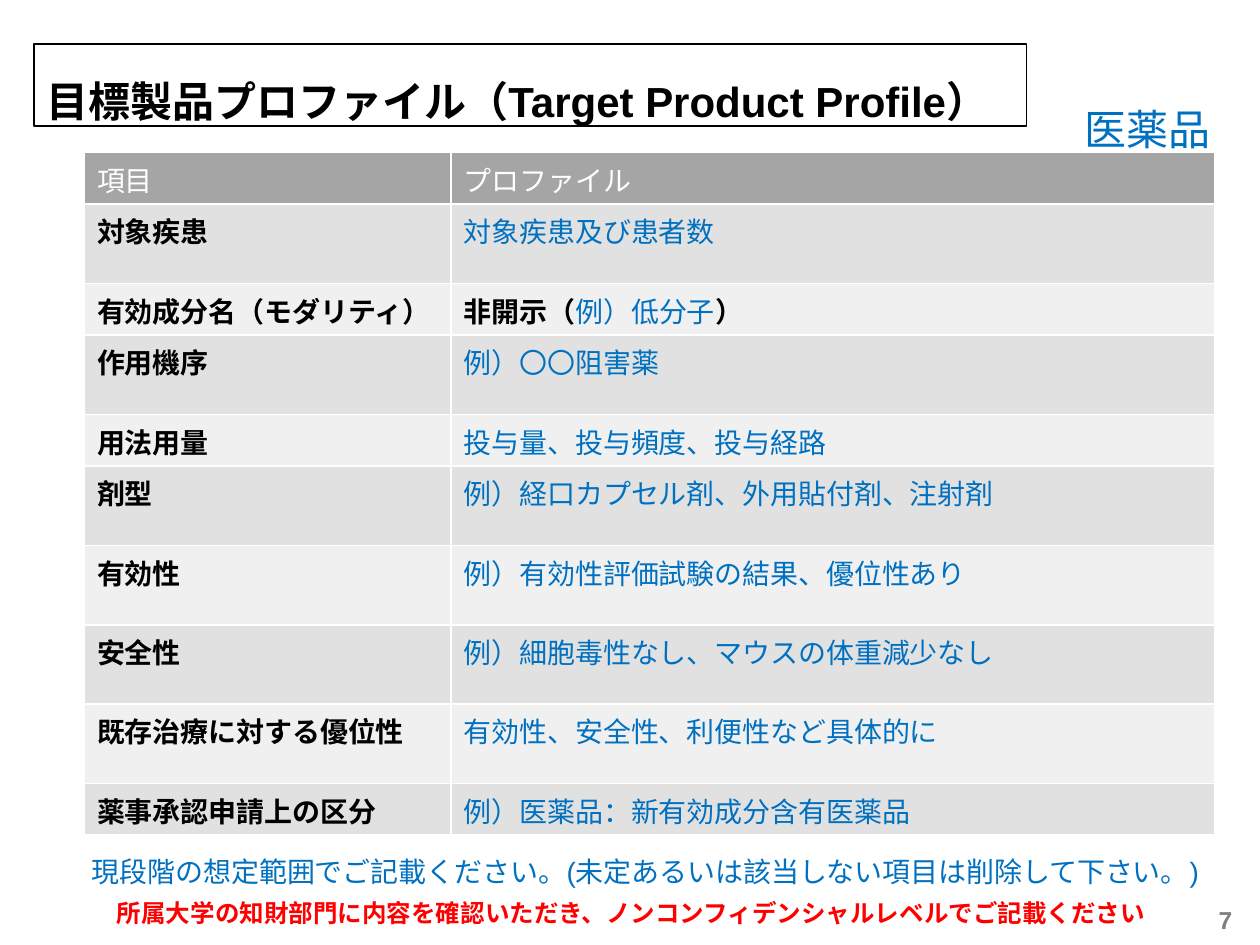
from lxml import etree
from pptx import Presentation
from pptx.dml.color import RGBColor
from pptx.enum.shapes import MSO_SHAPE
from pptx.enum.text import MSO_ANCHOR, MSO_AUTO_SIZE, PP_ALIGN
from pptx.oxml.ns import qn
from pptx.util import Inches, Pt

RECT = MSO_SHAPE.RECTANGLE
TOP, MIDDLE = MSO_ANCHOR.TOP, MSO_ANCHOR.MIDDLE
GROW, FIXED = MSO_AUTO_SIZE.SHAPE_TO_FIT_TEXT, MSO_AUTO_SIZE.NONE
LEFT, CENTER = PP_ALIGN.LEFT, PP_ALIGN.CENTER

BLACK, WHITE, BLUE, RED, GRAY = "000000", "FFFFFF", "0070C0", "FF0000", "808080"
HEAD, BANDS = "A5A5A5", ("E1E1E1", "F0F0F0")
SHORT, TALL = 0.41, 0.63

# item, profile (black bold parts are marked True), row height
ROWS = [
    ("対象疾患", "対象疾患及び患者数", TALL),
    ("有効成分名（モダリティ）",
     [("非開示（", True), ("例）低分子", False), ("）", True)], SHORT),
    ("作用機序", "例）〇〇阻害薬", TALL),
    ("用法用量", "投与量、投与頻度、投与経路", SHORT),
    ("剤型", "例）経口カプセル剤、外用貼付剤、注射剤", TALL),
    ("有効性", "例）有効性評価試験の結果、優位性あり", TALL),
    ("安全性", "例）細胞毒性なし、マウスの体重減少なし", TALL),
    ("既存治療に対する優位性", "有効性、安全性、利便性など具体的に", TALL),
    ("薬事承認申請上の区分", "例）医薬品：新有効成分含有医薬品", SHORT),
]


def color(text):
    return RGBColor.from_string(text)


def write(par, text, size=16, font="Arial", ink=BLACK, bold=False):
    """Add one formatted run to a paragraph."""
    run = par.add_run()
    run.text = text
    run.font.size = Pt(size)
    run.font.name = font
    run.font.bold = bold
    run.font.color.rgb = color(ink)


def edge(cell, ink=WHITE, width=1):
    """Draw the four borders of a cell, ahead of its fill."""
    props = cell._tc.get_or_add_tcPr()
    for spot, side in enumerate(("a:lnL", "a:lnR", "a:lnT", "a:lnB")):
        line = etree.Element(qn(side), w=str(Pt(width)))
        fill = etree.SubElement(line, qn("a:solidFill"))
        etree.SubElement(fill, qn("a:srgbClr"), val=ink)
        props.insert(spot, line)


class Deck:
    def __init__(self, font="Arial", grid="Calibri"):
        self.font, self.grid = font, grid
        self.prs = Presentation()
        self.prs.slide_width, self.prs.slide_height = Inches(10), Inches(7.5)
        self.slide = self.prs.slides.add_slide(self.prs.slide_layouts[6])

    def fill(self, shape, text, wrap=True, fit=GROW, space=None,
             align=LEFT, anchor=TOP, **style):
        frame = shape.text_frame
        frame.word_wrap = wrap
        frame.auto_size = fit
        frame.vertical_anchor = anchor
        par = frame.paragraphs[0]
        par.alignment = align
        par.line_spacing = space
        write(par, text, font=self.font, **style)

    def label(self, box, text, **style):
        shape = self.slide.shapes.add_textbox(*map(Inches, box))
        self.fill(shape, text, **style)

    def frame(self, box, text, **style):
        """Add a black outlined rectangle with text."""
        shape = self.slide.shapes.add_shape(RECT, *map(Inches, box))
        shape.shadow.inherit = False
        shape.fill.background()
        shape.line.color.rgb = color(BLACK)
        shape.line.width = Pt(0.75)
        self.fill(shape, text, **style)

    def cell(self, cell, parts, back):
        """Fill a cell from (text, ink, bold) parts."""
        cell.fill.solid()
        cell.fill.fore_color.rgb = color(back)
        edge(cell)
        par = cell.text_frame.paragraphs[0]
        for text, ink, bold in parts:
            write(par, text, font=self.grid, ink=ink, bold=bold)

    def table(self, box, heads, rows, widths):
        shape = self.slide.shapes.add_table(
            len(rows) + 1, len(heads), *map(Inches, box))
        table = shape.table
        for col, width in zip(table.columns, widths):
            col.width = Inches(width)
        table.rows[0].height = Inches(SHORT)
        for col, head in enumerate(heads):
            self.cell(table.cell(0, col), [(head, WHITE, False)], HEAD)
        for num, (item, note, height) in enumerate(rows, 1):
            back = BANDS[(num - 1) % 2]
            table.rows[num].height = Inches(height)
            if isinstance(note, str):
                note = [(note, False)]
            parts = [(text, BLACK if bold else BLUE, bold) for text, bold in note]
            self.cell(table.cell(num, 0), [(item, BLACK, True)], back)
            self.cell(table.cell(num, 1), parts, back)


def main():
    deck = Deck()
    deck.label((9.45, 7.1, 0.55, 0.4), "7", size=14, ink=GRAY, bold=True,
               fit=FIXED, align=CENTER, anchor=MIDDLE)
    deck.frame((0.27, 0.35, 7.88, 0.65),
               "目標製品プロファイル（Target Product Profile）",
               size=24, bold=True, wrap=False, space=1.5)
    deck.table((0.67, 1.21, 8.97, 5.42), ("項目", "プロファイル"), ROWS, (2.91, 6.06))
    deck.label((8.51, 0.57, 1.21, 0.65), "医薬品", size=24, ink=BLUE,
               wrap=False, space=1.5)
    deck.label((0.63, 6.73, 9.21, 0.37),
               "現段階の想定範囲でご記載ください。(未定あるいは該当しない項目は削除して下さい。)",
               ink=BLUE)
    deck.label((0.83, 7.08, 8.43, 0.34),
               "所属大学の知財部門に内容を確認いただき、ノンコンフィデンシャルレベルでご記載ください",
               size=14, ink=RED, bold=True)
    deck.prs.save("out.pptx")


if __name__ == "__main__":
    main()
